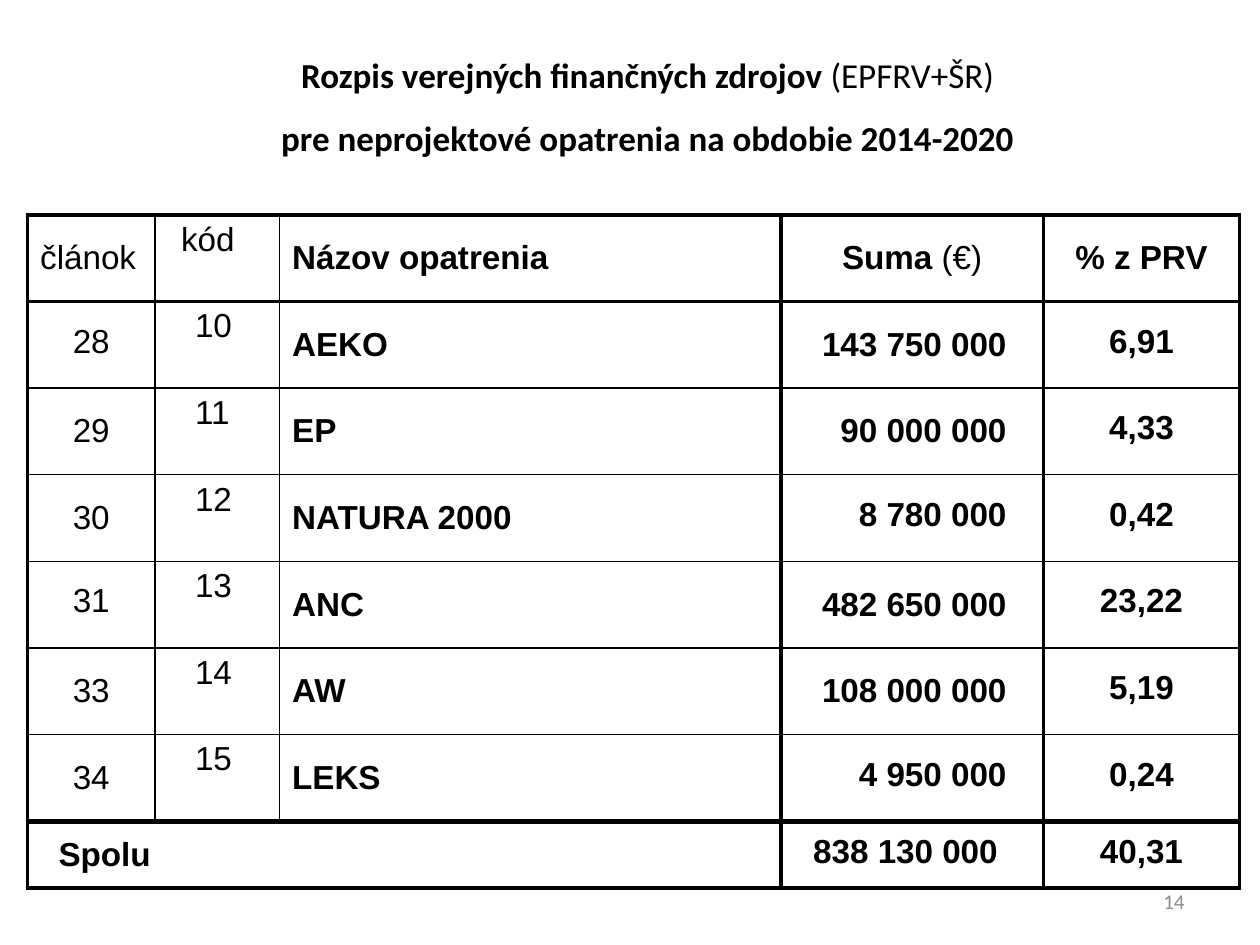
from lxml import etree
from pptx import Presentation
from pptx.dml.color import RGBColor
from pptx.enum.text import MSO_ANCHOR as Anchor, MSO_AUTO_SIZE as AutoSize, PP_ALIGN as Align
from pptx.oxml.ns import qn
from pptx.util import Pt

COLORS = {"ink": "000000", "paper": "FFFFFF", "number": "8C8C8C"}
COLUMN_WIDTHS = [72.7, 71.3, 286.6, 149.8, 112.3]
ROW_HEIGHTS = [49.5] * 7 + [38.3]
COLUMN_LINES = [2.25, 1, 1, 2.25, 2.25, 2.25]
ROW_LINES = [2.25, 2.25, 1, 1, 1, 1, 1, 3, 2.25]
MEASURES = [
    ("28", "10", "AEKO", "143 750 000", "6,91"),
    ("29", "11", "EP", "90 000 000", "4,33"),
    ("30", "12", "NATURA 2000", "8 780 000", "0,42"),
    ("31", "13", "ANC", "482 650 000", "23,22"),
    ("33", "14", "AW", "108 000 000", "5,19"),
    ("34", "15", "LEKS", "4 950 000", "0,24"),
]
TIGHT = {"28", "31", "8 780 000", "4 950 000", "838 130 000"}


def write(para, text, size=19, font="Arial", color="ink", bold=False, align=Align.LEFT, spacing=None):
    """Add a formatted span to the paragraph."""
    para.alignment = align
    if spacing:
        para.line_spacing = spacing
    span = para.add_run()
    span.text = text
    span.font.size = Pt(size)
    span.font.name = font
    span.font.bold = bold
    span.font.color.rgb = RGBColor.from_string(COLORS[color])


def place(box, left, top, width, height):
    box.left, box.top, box.width, box.height = Pt(left), Pt(top), Pt(width), Pt(height)


def add_title(page, left, top, width, height):
    title = page.shapes.title
    place(title, left, top, width, height)
    frame = title.text_frame
    frame.auto_size = AutoSize.NONE
    frame.word_wrap = True
    frame.vertical_anchor = Anchor.MIDDLE
    style = dict(size=20, font="Calibri", align=Align.CENTER, spacing=0.75)
    first = frame.paragraphs[0]
    write(first, "Rozpis verejných finančných zdrojov ", bold=True, **style)
    write(first, "(EPFRV+ŠR)", **style)
    second = frame.add_paragraph()
    second.space_before = Pt(18)
    write(second, "pre neprojektové opatrenia na obdobie 2014-2020", bold=True, **style)


def add_borders(cell, left, right, top, bottom):
    properties = cell._tc.get_or_add_tcPr()
    for side, width in zip("LRTB", (left, right, top, bottom)):
        line = etree.SubElement(properties, qn(f"a:ln{side}"), w=str(Pt(width)))
        fill = etree.SubElement(line, qn("a:solidFill"))
        etree.SubElement(fill, qn("a:srgbClr"), val=COLORS["ink"])


def fill_cell(cell, text, plain="", indent=7.2, right=7.2, anchor=Anchor.MIDDLE, **style):
    """Write the text, then an optional part that is not bold."""
    cell.margin_left, cell.margin_right = Pt(indent), Pt(right)
    cell.vertical_anchor = anchor
    para = cell.text_frame.paragraphs[0]
    write(para, text, **style)
    if plain:
        write(para, plain, **{**style, "bold": False})


def add_measures(page, left, top):
    size = Pt(sum(COLUMN_WIDTHS)), Pt(sum(ROW_HEIGHTS))
    table = page.shapes.add_table(len(ROW_HEIGHTS), len(COLUMN_WIDTHS), Pt(left), Pt(top), *size).table
    table.first_row = table.horz_banding = False
    for column, width in zip(table.columns, COLUMN_WIDTHS):
        column.width = Pt(width)
    for row, height in zip(table.rows, ROW_HEIGHTS):
        row.height = Pt(height)

    total = len(ROW_HEIGHTS) - 1
    table.cell(total, 0).merge(table.cell(total, 2))
    for r in range(len(ROW_HEIGHTS)):
        for c in range(len(COLUMN_WIDTHS)):
            cell = table.cell(r, c)
            if cell.is_spanned:
                continue
            end = c + (cell.span_width if cell.is_merge_origin else 1)
            add_borders(cell, COLUMN_LINES[c], COLUMN_LINES[end], ROW_LINES[r], ROW_LINES[r + 1])
            cell.fill.solid()
            cell.fill.fore_color.rgb = RGBColor.from_string(COLORS["paper"])

    strong = dict(bold=True)
    centered = dict(bold=True, align=Align.CENTER)
    share = dict(centered, spacing=0.75)
    amount = dict(bold=True, align=Align.RIGHT, right=21)

    fill_cell(table.cell(0, 0), "článok")
    fill_cell(table.cell(0, 1), "kód", indent=15, anchor=Anchor.TOP)
    fill_cell(table.cell(0, 2), "Názov opatrenia", **strong)
    fill_cell(table.cell(0, 3), "Suma ", plain="(€)", **centered)
    fill_cell(table.cell(0, 4), "% z PRV", **centered)

    columns = [dict(align=Align.CENTER), dict(indent=23, anchor=Anchor.TOP), strong, amount, share]
    for r, measure in enumerate(MEASURES, start=1):
        for c, (text, style) in enumerate(zip(measure, columns)):
            spacing = {"spacing": 0.75} if text in TIGHT else {}
            fill_cell(table.cell(r, c), text, **{**style, **spacing})

    fill_cell(table.cell(total, 0), "Spolu", indent=17.7, **strong)
    fill_cell(table.cell(total, 3), "838 130 000", **{**amount, "right": 26, "spacing": 0.75})
    fill_cell(table.cell(total, 4), "40,31", **share)


def add_page_number(page, left, top, width, height):
    box = page.shapes.add_textbox(Pt(left), Pt(top), Pt(width), Pt(height))
    box.text_frame.word_wrap = True
    box.text_frame.vertical_anchor = Anchor.MIDDLE
    write(box.text_frame.paragraphs[0], "14", size=12, font="Calibri", color="number", align=Align.RIGHT)


def main():
    deck = Presentation()
    deck.slide_width, deck.slide_height = Pt(720), Pt(540)
    page = deck.slides.add_slide(deck.slide_layouts[5])
    add_title(page, 45.4, 31.7, 649.4, 63.4)
    add_measures(page, 15.8, 122.8)
    add_page_number(page, 516.2, 500.4, 167.8, 28.8)
    deck.save("out.pptx")


if __name__ == "__main__":
    main()
